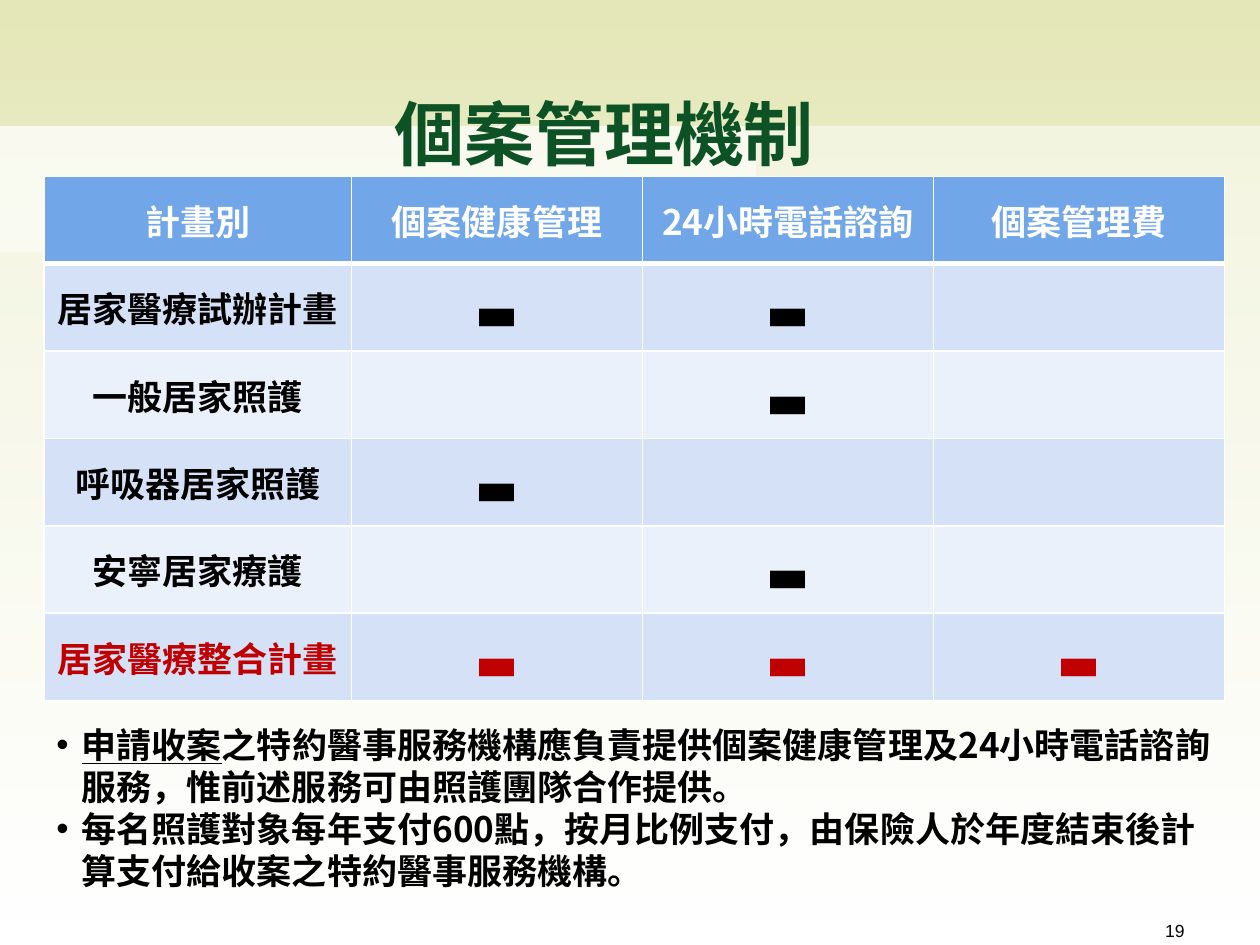
import dataclasses

import pptx
import pptx.dml.color
import pptx.enum.text
import pptx.oxml.ns
import pptx.util
from lxml import etree

Inches, Pt = pptx.util.Inches, pptx.util.Pt
ALIGN, ANCHOR = pptx.enum.text.PP_ALIGN, pptx.enum.text.MSO_ANCHOR


@dataclasses.dataclass(frozen=True)
class Theme:
    heading: str = "Noto Sans CJK SC"
    number: str = "Arial"
    green: str = "0D5224"
    black: str = "000000"
    white: str = "FFFFFF"
    red: str = "C00000"
    header: str = "71A7E9"
    bands: tuple = ("D5E1F7", "EBF1FB")
    sky: str = "E4E7B7"
    title_size: int = 40
    body_size: int = 20
    number_size: int = 10


THEME = Theme()
WIDTH, HEIGHT = 10, 7.5
LEFT, CONTENT_WIDTH = 0.35, 9.37
TABLE_TOP, TABLE_HEIGHT = 1.4, 4.16
FIRST_COLUMN = 2.44

TITLE = "個案管理機制"
HEADERS = ["計畫別", "個案健康管理", "24小時電話諮詢", "個案管理費"]
MARK = "▄"
PLANS = [  # plan, then whether each service applies
    ("居家醫療試辦計畫", (True, True, False)),
    ("一般居家照護", (False, True, False)),
    ("呼吸器居家照護", (True, False, False)),
    ("安寧居家療護", (False, True, False)),
    ("居家醫療整合計畫", (True, True, True)),
]
NOTES = [  # underlined opening, then the rest
    ("申請收案", "之特約醫事服務機構應負責提供個案健康管理及24小時電話諮詢服務，"
                 "惟前述服務可由照護團隊合作提供。"),
    ("", "每名照護對象每年支付600點，按月比例支付，由保險人於年度結束後"
         "計算支付給收案之特約醫事服務機構。"),
]
PAGE_NUMBER = "19"

LOWER_PANEL = [(0, 1.21), (10, 1.21), (10, 7.5), (0, 7.5)]
UPPER_BAND = [
    (9.98, 0.77), (4.26, 0.76), (4.08, 0.77), (3.78, 0.91), (3.7, 0.94),
    (3.56, 0.96), (1.8, 0.96), (0, 0.95), (0, 1.5), (6.26, 1.5),
    (6.38, 1.47), (6.74, 1.31), (6.92, 1.3), (9.99, 1.3),
]


def rgb(color):
    return pptx.dml.color.RGBColor.from_string(color)


def add_element(parent, tag, **attributes):
    return etree.SubElement(parent, pptx.oxml.ns.qn(tag), attributes)


def style(paragraph, size, color, name=THEME.heading, bold=True):
    font = paragraph.font
    font.size, font.bold, font.name = Pt(size), bold, name
    font.color.rgb = rgb(color)
    add_element(font._element, "a:ea", typeface=name)


def add_veil(slide, points):
    """Add a half-transparent white outline."""
    builder = slide.shapes.build_freeform(*points[0], scale=Inches(1))
    builder.add_line_segments(points[1:], close=True)
    shape = builder.convert_to_shape()
    shape.shadow.inherit = False
    shape.line.fill.background()
    shape.fill.solid()
    shape.fill.fore_color.rgb = rgb(THEME.white)
    color = shape._element.spPr.find(".//" + pptx.oxml.ns.qn("a:srgbClr"))
    add_element(color, "a:alpha", val="50000")


def add_text_box(slide, left, top, width, height):
    box = slide.shapes.add_textbox(*map(Inches, (left, top, width, height)))
    box.text_frame.word_wrap = True
    return box.text_frame


def format_cell(cell, text, fill, color, row):
    properties = cell._tc.get_or_add_tcPr()
    widths = {"L": 1, "R": 1, "T": 3 if row == 1 else 1, "B": 3 if row == 0 else 1}
    for side, width in widths.items():
        line = add_element(properties, f"a:ln{side}", w=str(Pt(width)))
        add_element(add_element(line, "a:solidFill"), "a:srgbClr", val=THEME.white)
    cell.fill.solid()
    cell.fill.fore_color.rgb = rgb(fill)
    cell.vertical_anchor = ANCHOR.MIDDLE
    cell.margin_left = cell.margin_right = Inches(0.05)
    cell.text = text
    paragraph = cell.text_frame.paragraphs[0]
    paragraph.alignment = ALIGN.CENTER
    style(paragraph, THEME.body_size, color)


def add_plan_table(slide):
    rows = [HEADERS] + [
        [plan] + [MARK if applies else "" for applies in services]
        for plan, services in PLANS
    ]
    table = slide.shapes.add_table(
        len(rows), len(HEADERS), Inches(LEFT), Inches(TABLE_TOP),
        Inches(CONTENT_WIDTH), Inches(TABLE_HEIGHT)).table
    service_width = (CONTENT_WIDTH - FIRST_COLUMN) / (len(HEADERS) - 1)
    for index, column in enumerate(table.columns):
        column.width = Inches(service_width if index else FIRST_COLUMN)
    for index, texts in enumerate(rows):
        table.rows[index].height = Inches(TABLE_HEIGHT / len(rows))
        if index == 0:
            fill, color = THEME.header, THEME.white
        else:
            fill = THEME.bands[(index - 1) % 2]
            color = THEME.red if index == len(PLANS) else THEME.black
        for column, text in enumerate(texts):
            format_cell(table.cell(index, column), text, fill, color, index)


def add_notes_list(slide):
    frame = add_text_box(slide, LEFT, 5.69, CONTENT_WIDTH, 1.45)
    for index, (opening, rest) in enumerate(NOTES):
        paragraph = frame.add_paragraph() if index else frame.paragraphs[0]
        if opening:
            run = paragraph.add_run()
            run.text = opening
            run.font.underline = True
        paragraph.add_run().text = rest
        paragraph.line_spacing = Pt(THEME.body_size * 1.2)
        properties = paragraph._p.get_or_add_pPr()
        properties.set("marL", str(Inches(0.2)))
        properties.set("indent", str(-Inches(0.2)))
        add_element(properties, "a:buFont", typeface=THEME.number)
        add_element(properties, "a:buChar", char="•")
        style(paragraph, THEME.body_size, THEME.black)


def place_title(slide):
    title = slide.shapes.title
    title.left, title.top = Inches(3.03), Inches(0.68)
    title.width, title.height = Inches(3.74), Inches(0.74)
    slide.shapes._spTree.append(title._element)  # bring to front
    frame = title.text_frame
    frame.text = TITLE
    frame.auto_size = pptx.enum.text.MSO_AUTO_SIZE.NONE
    frame.vertical_anchor = ANCHOR.MIDDLE
    frame.paragraphs[0].alignment = ALIGN.LEFT
    style(frame.paragraphs[0], THEME.title_size, THEME.green)


def main():
    presentation = pptx.Presentation()
    presentation.slide_width, presentation.slide_height = Inches(WIDTH), Inches(HEIGHT)
    slide = presentation.slides.add_slide(presentation.slide_layouts[5])

    background = slide.background.fill
    background.gradient()
    background.gradient_angle = 270
    for stop, color, position in zip(
            background.gradient_stops, (THEME.sky, THEME.white), (0, 1)):
        stop.color.rgb = rgb(color)
        stop.position = position

    for points in (LOWER_PANEL, UPPER_BAND):
        add_veil(slide, points)
    add_plan_table(slide)
    place_title(slide)
    add_notes_list(slide)

    number = add_text_box(slide, 7.17, 7.25, 2.33, 0.18).paragraphs[0]
    number.text = PAGE_NUMBER
    number.alignment = ALIGN.RIGHT
    style(number, THEME.number_size, THEME.black, THEME.number, bold=False)
    presentation.save("out.pptx")


if __name__ == "__main__":
    main()
